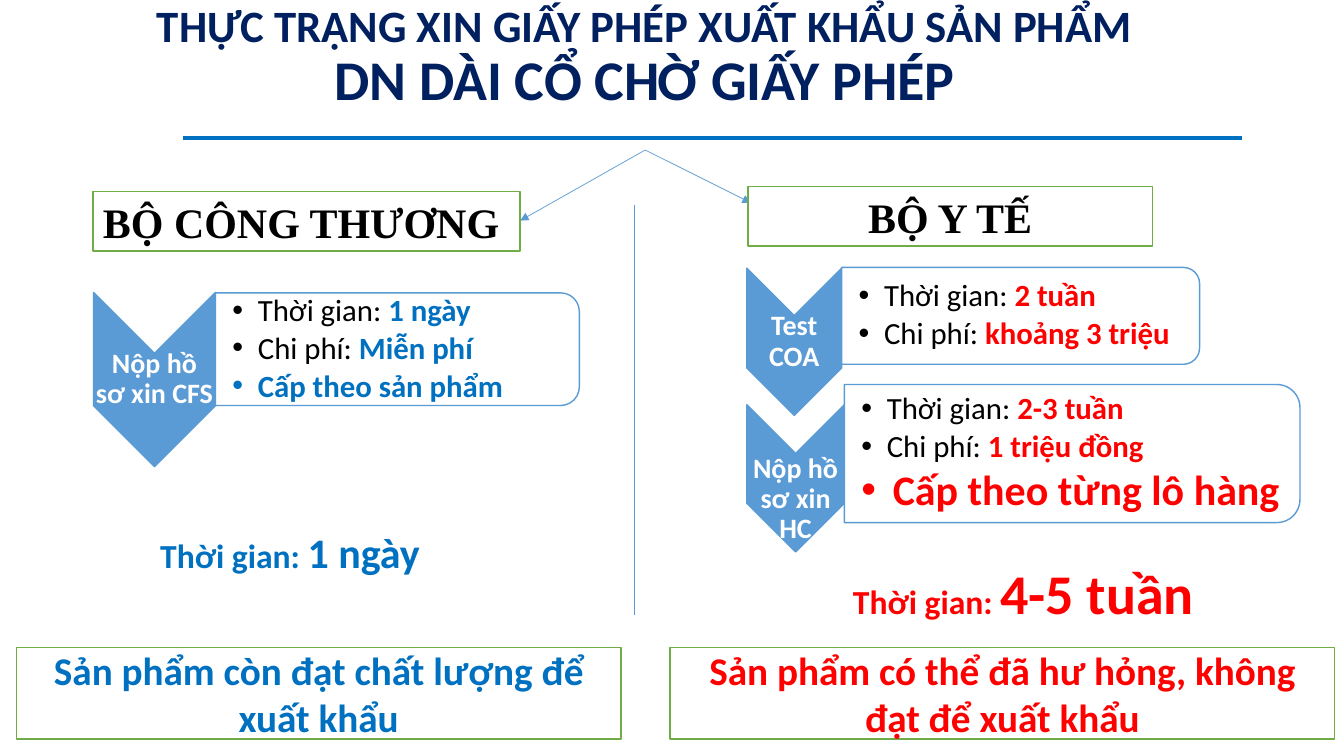
from dataclasses import dataclass
from lxml import etree
from pptx import Presentation
from pptx import util as u
from pptx.dml.color import RGBColor
from pptx.enum import shapes, text
from pptx.oxml.ns import qn


@dataclass(frozen=True)
class Theme:
    navy: str = "002060"
    blue: str = "0070C0"
    red: str = "FF0000"
    sky: str = "5B9BD5"
    green: str = "70AD47"
    black: str = "000000"
    white: str = "FFFFFF"
    sans: str = "Calibri"
    serif: str = "Times New Roman"
    huge: int = 40
    title: int = 32
    large: int = 30
    verdict: int = 28
    label: int = 24
    body: int = 22
    step: int = 20


T = Theme()

SLIDE = (33.87, 19.05)
TITLE = (1.65, 0.1, 29.2, 3.68)
TITLE_LINES = [
    [("THỰC TRẠNG XIN GIẤY PHÉP XUẤT KHẨU SẢN PHẨM", T.title, T.navy, True)],
    [("DN DÀI CỔ CHỜ GIẤY PHÉP", T.huge, T.navy, True)],
]
LINES = [
    ((4.62, 3.48), (31.29, 3.48), T.blue, 3, False),
    ((15.98, 5.16), (15.98, 15.49), T.sky, 0.5, False),
    ((16.26, 3.78), (18.92, 5.11), T.sky, 0.5, True),
    ((16.26, 3.78), (13.11, 5.56), T.sky, 0.5, True),
]
FRAMES = [
    ((2.34, 4.83, 10.77, 1.5), "BỘ CÔNG THƯƠNG ", T.large, T.black, T.serif),
    ((18.85, 4.7, 10.19, 1.5), "BỘ Y TẾ", T.large, T.black, T.serif),
    ((0.41, 16.31, 15.24, 2.31), "Sản phẩm còn đạt chất lượng để xuất khẩu",
     T.verdict, T.blue, T.sans),
    ((16.89, 16.31, 16.74, 2.31), "Sản phẩm có thể đã hư hỏng, không đạt để xuất khẩu",
     T.verdict, T.red, T.sans),
]
DURATIONS = [
    ((2.18, 13.13, 10.26, 1.55), "1 ngày", T.large, T.blue),
    ((20.29, 13.94, 11, 1.96), "4-5 tuần", T.huge, T.red),
]
STEPS = [
    dict(name="Nộp hồ sơ xin CFS", chevron=(2.36, 7.37, 3.07, 4.39), drop=0,
         panel=(7.38, 9.17, 2.84), color=T.blue, time="1 ngày", cost="Miễn phí",
         scope=("Cấp theo sản phẩm", T.body)),
    dict(name="Test COA", chevron=(18.82, 6.76, 2.39, 3.71), drop=0,
         panel=(6.74, 9.02, 2.44), color=T.red, time="2 tuần", cost="khoảng 3 triệu",
         scope=None),
    dict(name="Nộp hồ sơ xin HC", chevron=(18.82, 10.2, 2.46, 3.71), drop=0.53,
         panel=(9.69, 11.48, 3.48), color=T.red, time="2-3 tuần", cost="1 triệu đồng",
         scope=("Cấp theo từng lô hàng", T.large)),
]


def rgb(value):
    return RGBColor.from_string(value)


def assign(target, values):
    for name, value in values.items():
        setattr(target, name, value)


def add_bullet(para, indent):
    props = para._p.get_or_add_pPr()
    props.set("marL", str(u.Cm(indent)))
    props.set("indent", str(-u.Cm(indent)))
    etree.SubElement(props, qn("a:buFont")).set("typeface", "Arial")
    etree.SubElement(props, qn("a:buChar")).set("char", "•")


def write(box, lines, font=T.sans, anchor="MIDDLE", align="CENTER", spacing=1.0,
          insets=(0.25, 0.13, 0.25, 0.13), bulleted=False):
    frame = box.text_frame
    left, top, right, bottom = map(u.Cm, insets)
    assign(frame, dict(word_wrap=True, auto_size=text.MSO_AUTO_SIZE.NONE,
                       vertical_anchor=text.MSO_ANCHOR[anchor],
                       margin_left=left, margin_top=top,
                       margin_right=right, margin_bottom=bottom))
    for index, spans in enumerate(lines):
        para = frame.add_paragraph() if index else frame.paragraphs[0]
        assign(para, dict(alignment=text.PP_ALIGN[align], line_spacing=spacing))
        if bulleted:
            size = spans[0][1]
            para.space_after = u.Pt(round(size * 0.15, 1))
            add_bullet(para, 0.79 if size > T.body else 0.64)
        for words, size, color, bold in spans:
            span = para.add_run()
            span.text = words
            assign(span.font, dict(name=font, size=u.Pt(size), bold=bold))
            span.font.color.rgb = rgb(color)


def add_text(page, area, lines, **layout):
    write(page.shapes.add_textbox(*map(u.Cm, area)), lines, **layout)


def add_block(page, kind, area, fill, line):
    block = page.shapes.add_shape(kind, *map(u.Cm, area))
    block.shadow.inherit = False
    block.fill.solid()
    block.fill.fore_color.rgb = rgb(fill)
    block.line.color.rgb = rgb(line)
    block.line.width = u.Pt(1)
    return block


def add_turned(page, kind, area, fill):
    left, top, width, height = area
    shift = (width - height) / 2
    block = add_block(page, kind, (left + shift, top - shift, height, width), fill, T.sky)
    block.rotation = 90


def add_line(page, start, end, color, width, arrow):
    line = page.shapes.add_connector(shapes.MSO_CONNECTOR.STRAIGHT, *map(u.Cm, start + end))
    line.line.color.rgb = rgb(color)
    line.line.width = u.Pt(width)
    if arrow:
        etree.SubElement(line.line._get_or_add_ln(), qn("a:tailEnd")).set("type", "triangle")
    etree.SubElement(line._element.spPr, qn("a:effectLst"))


def add_step(page, step):
    left, top, width, height = step["chevron"]
    panel_top, panel_width, panel_height = step["panel"]
    panel = (left + width, panel_top, panel_width, panel_height)
    color = step["color"]
    facts = [[(label, T.body, T.black, False), (step[key], T.body, color, True)]
             for label, key in (("Thời gian: ", "time"), ("Chi phí: ", "cost"))]
    if step["scope"]:
        facts.append([(*step["scope"], color, True)])
    add_turned(page, shapes.MSO_SHAPE.CHEVRON, step["chevron"], T.sky)
    add_text(page, (left, top + step["drop"], width, height),
             [[(step["name"], T.step, T.white, True)]], spacing=0.9, insets=(0.03,) * 4)
    add_turned(page, shapes.MSO_SHAPE.ROUND_2_SAME_RECTANGLE, panel, T.white)
    add_text(page, panel, facts, align="LEFT", spacing=0.9,
             insets=(0.43, 0.05, 0.05, 0.05), bulleted=True)


def main():
    deck = Presentation()
    deck.slide_width, deck.slide_height = map(u.Cm, SLIDE)
    page = deck.slides.add_slide(deck.slide_layouts[6])
    add_text(page, TITLE, TITLE_LINES, anchor="TOP", spacing=0.9, insets=(0.25, 0, 0.25, 0))
    for line in LINES:
        add_line(page, *line)
    for area, words, size, color in DURATIONS:
        add_text(page, area, [[("Thời gian: ", T.label, color, True),
                               (words, size, color, True)]], anchor="TOP")
    for area, words, size, color, font in FRAMES:
        frame = add_block(page, shapes.MSO_SHAPE.RECTANGLE, area, T.white, T.green)
        write(frame, [[(words, size, color, True)]], font=font)
    for step in STEPS:
        add_step(page, step)
    deck.save("out.pptx")


if __name__ == "__main__":
    main()
